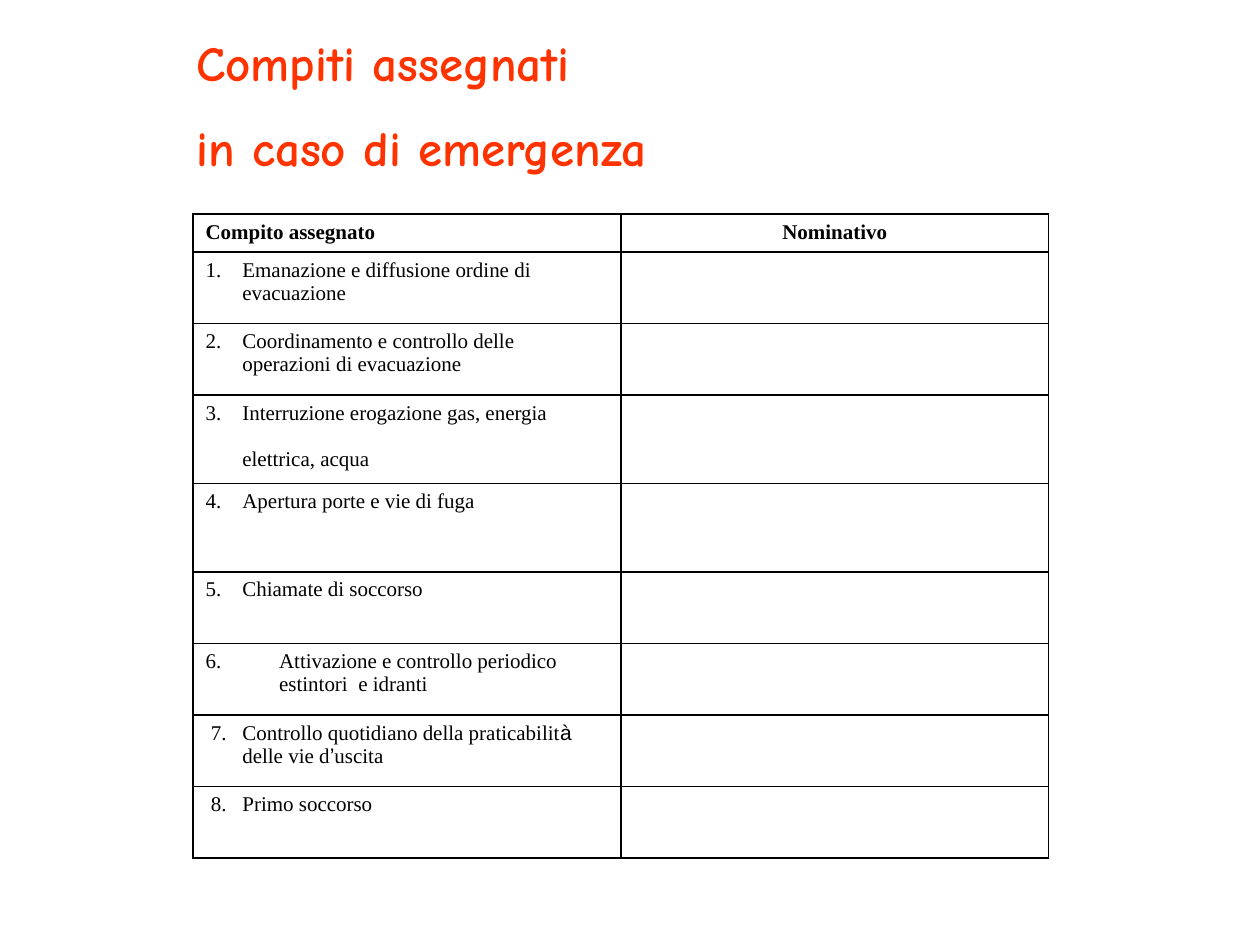
from itertools import groupby

from lxml import etree
from pptx import Presentation
from pptx.dml.color import RGBColor
from pptx.enum.text import MSO_ANCHOR, MSO_AUTO_SIZE, PP_ALIGN
from pptx.oxml.ns import qn
from pptx.util import Pt

LEFT, CENTER = PP_ALIGN.LEFT, PP_ALIGN.CENTER
TOP, NO_AUTOFIT = MSO_ANCHOR.TOP, MSO_AUTO_SIZE.NONE
TITLE_RED = RGBColor(0xFF, 0x33, 0x00)
BLACK = RGBColor(0x00, 0x00, 0x00)
BORDER_SIDES = ("a:lnL", "a:lnR", "a:lnT", "a:lnB")
ARIAL_LETTERS = "à’"

TITLE_FORMAT = {"name": "Comic Neue", "size": Pt(28), "bold": True}
HEADER_FORMAT = {"name": "Times New Roman", "size": Pt(12), "bold": True}
TASK_FORMAT = {**HEADER_FORMAT, "bold": False}

# Lines of the task, row height, left margin, hanging indent, gap between lines
TASKS = [
    (["Emanazione e diffusione ordine di", "evacuazione"], 40.9, 21, 21, 0),
    (["Coordinamento e controllo delle", "operazioni di evacuazione"], 40.9, 21, 21, 0),
    (["Interruzione erogazione gas, energia", "elettrica, acqua"], 50.5, 21, 21, 13.5),
    (["Apertura porte e vie di fuga"], 50.5, 21, 21, 0),
    (["Chiamate di soccorso"], 40.9, 21, 21, 0),
    (["Attivazione e controllo periodico estintori  e idranti"], 40.9, 42, 42, 0),
    (["Controllo quotidiano della praticabilità", "delle vie d’uscita"], 40.9, 21, 18, 0),
    (["Primo soccorso"], 40.9, 21, 18, 0),
]
HEADER_HEIGHT = 21.6


def write_line(paragraph, text, formats, color):
    for in_arial, letters in groupby(text, lambda letter: letter in ARIAL_LETTERS):
        run = paragraph.add_run()
        run.text = "".join(letters)
        for attribute, value in formats.items():
            setattr(run.font, attribute, value)
        run.font.color.rgb = color
        if in_arial:
            run.font.name = "Arial"


def style_cell(cell):
    cell.fill.background()
    properties = cell._tc.get_or_add_tcPr()
    for position, side in enumerate(BORDER_SIDES):
        line = etree.Element(qn(side), w=str(Pt(1)))
        fill = etree.SubElement(line, qn("a:solidFill"))
        etree.SubElement(fill, qn("a:srgbClr"), val=str(BLACK))
        properties.insert(position, line)


prs = Presentation()
prs.slide_width, prs.slide_height = Pt(720), Pt(540)
slide = prs.slides.add_slide(prs.slide_layouts[5])

# Title
title = slide.shapes.title
title.left, title.top, title.width, title.height = Pt(105), Pt(15), Pt(341), Pt(91.5)
heading = title.text_frame
heading.auto_size = NO_AUTOFIT
heading.vertical_anchor = TOP
heading.word_wrap = True
for number, text in enumerate(["Compiti assegnati", "in caso di emergenza"]):
    paragraph = heading.add_paragraph() if number else heading.paragraphs[0]
    paragraph.alignment = LEFT
    paragraph.space_before = Pt(15 if number else 0)
    write_line(paragraph, text, TITLE_FORMAT, TITLE_RED)

# Table of tasks and names
table_height = HEADER_HEIGHT + sum(task[1] for task in TASKS)
duties = slide.shapes.add_table(
    len(TASKS) + 1, 2, Pt(110.3), Pt(122.4), Pt(489), Pt(table_height)
).table
duties.first_row = duties.horz_banding = False
for column in duties.columns:
    column.width = Pt(244.5)
for cell in duties.iter_cells():
    style_cell(cell)

# Header row
duties.rows[0].height = Pt(HEADER_HEIGHT)
for column, (text, alignment) in enumerate([("Compito assegnato", LEFT), ("Nominativo", CENTER)]):
    paragraph = duties.cell(0, column).text_frame.paragraphs[0]
    paragraph.alignment = alignment
    write_line(paragraph, text, HEADER_FORMAT, BLACK)

# Numbered tasks
for number, (lines, height, margin, hanging, gap) in enumerate(TASKS, start=1):
    duties.rows[number].height = Pt(height)
    task = duties.cell(number, 0).text_frame
    for index, text in enumerate(lines):
        paragraph = task.add_paragraph() if index else task.paragraphs[0]
        properties = paragraph._p.get_or_add_pPr()
        properties.set("marL", str(Pt(margin)))
        if index:
            properties.set("indent", "0")
            paragraph.space_before = Pt(gap)
        else:
            properties.set("indent", str(-Pt(hanging)))
            etree.SubElement(
                properties, qn("a:buAutoNum"), type="arabicPeriod", startAt=str(number)
            )
        write_line(paragraph, text, TASK_FORMAT, BLACK)

prs.save("out.pptx")
